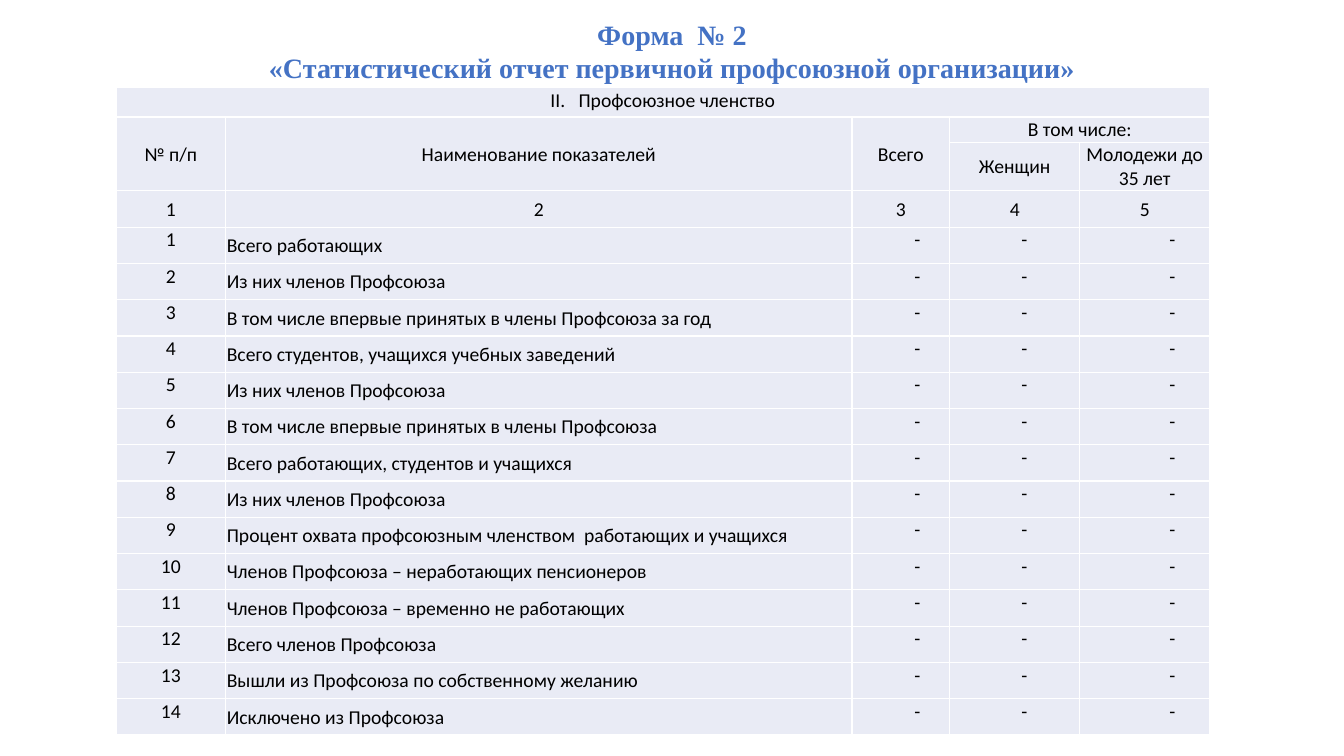
from pptx import Presentation
from pptx import util as u
from pptx.dml import color
from pptx.enum import text as t
from pptx.oxml import ns, xmlchemy

COLORS = {"title": "4472C4", "text": "000000", "cell": "E9EBF5", "border": "FFFFFF"}
TITLE = ["Форма  № 2", "«Статистический отчет первичной профсоюзной организации»"]
COLUMNS = [1.09, 6.21, 0.97, 1.29, 1.29]
HEADER_ROWS = [0.29, 0.25, 0.47]
ROW_HEIGHT = 0.36
DASH_INDENTS = [0.62, 0.71, 0.89]
HEADINGS = [
    (0, 0, 0, 4, "II.   Профсоюзное членство"),
    (1, 0, 2, 0, "№ п/п"),
    (1, 1, 2, 1, "Наименование показателей"),
    (1, 2, 2, 2, "Всего"),
    (1, 3, 1, 4, "В том числе:"),
    (2, 3, 2, 3, "Женщин"),
    (2, 4, 2, 4, "Молодежи до 35 лет"),
]
INDICATORS = [
    "Всего работающих",
    "Из них членов Профсоюза",
    "В том числе впервые принятых в члены Профсоюза за год",
    "Всего студентов, учащихся учебных заведений",
    "Из них членов Профсоюза",
    "В том числе впервые принятых в члены Профсоюза",
    "Всего работающих, студентов и учащихся",
    "Из них членов Профсоюза",
    "Процент охвата профсоюзным членством  работающих и учащихся",
    "Членов Профсоюза – неработающих пенсионеров",
    "Членов Профсоюза – временно не работающих",
    "Всего членов Профсоюза",
    "Вышли из Профсоюза по собственному желанию",
    "Исключено из Профсоюза",
]
TITLE_FONT = {"name": "Times New Roman", "size": u.Pt(20), "bold": True}
CELL_FONT = {"name": "Calibri", "size": u.Pt(14), "bold": False}
CENTER, LEFT = t.PP_ALIGN.CENTER, t.PP_ALIGN.LEFT
TOP, MIDDLE = t.MSO_ANCHOR.TOP, t.MSO_ANCHOR.MIDDLE


def set_all(target, values):
    """Set every attribute in values on the target."""
    for name, value in values.items():
        setattr(target, name, value)


def format_font(font, values, ink):
    """Apply font values and a text colour."""
    set_all(font, values)
    font.color.rgb = color.RGBColor.from_string(COLORS[ink])


def add_title(slide, left, top, width, height):
    """Place the two-line heading in the title placeholder."""
    title = slide.shapes.title
    set_all(title, dict(left=u.Inches(left), top=u.Inches(top),
                        width=u.Inches(width), height=u.Inches(height)))
    frame = title.text_frame
    set_all(frame, dict(text="\n".join(TITLE), word_wrap=True, vertical_anchor=TOP,
                        auto_size=t.MSO_AUTO_SIZE.NONE))
    for line in frame.paragraphs:
        set_all(line, dict(alignment=CENTER, line_spacing=1.0))
        format_font(line.font, TITLE_FONT, "title")


def style_cell(cell):
    """Give a cell its fill, margins and thin borders."""
    set_all(cell, dict(margin_left=u.Inches(0.01), margin_right=u.Inches(0.01),
                       margin_top=u.Inches(0.01), margin_bottom=0))
    properties = cell._tc.get_or_add_tcPr()
    for side in ("lnL", "lnR", "lnT", "lnB"):
        properties.append(xmlchemy.OxmlElement(f"a:{side}"))
        border = properties[-1]
        border.set("w", str(u.Pt(1)))
        solid = xmlchemy.OxmlElement("a:solidFill")
        shade = xmlchemy.OxmlElement("a:srgbClr")
        shade.set("val", COLORS["border"])
        solid.append(shade)
        border.append(solid)
    cell.fill.solid()
    cell.fill.fore_color.rgb = color.RGBColor.from_string(COLORS["cell"])
    format_font(cell.text_frame.paragraphs[0].font, CELL_FONT, "text")


def write_cell(cell, words, alignment, anchor):
    """Write one aligned entry into a cell."""
    paragraph = cell.text_frame.paragraphs[0]
    paragraph.add_run().text = words
    paragraph.alignment = alignment
    format_font(paragraph.runs[0].font, CELL_FONT, "text")
    cell.vertical_anchor = anchor


def add_membership_table(slide, left, top):
    """Build the membership form with its merged heading."""
    heights = HEADER_ROWS + [ROW_HEIGHT] * (len(INDICATORS) + 1)
    table = slide.shapes.add_table(
        len(heights), len(COLUMNS), u.Inches(left), u.Inches(top),
        u.Inches(sum(COLUMNS)), u.Inches(sum(heights))).table
    set_all(table, dict(first_row=False, horz_banding=False))
    for column, width in zip(table.columns, COLUMNS):
        column.width = u.Inches(width)
    for row, height in zip(table.rows, heights):
        row.height = u.Inches(height)
    for cell in table.iter_cells():
        style_cell(cell)
    for row, column, last_row, last_column, words in HEADINGS:
        heading = table.cell(row, column)
        if (row, column) != (last_row, last_column):
            heading.merge(table.cell(last_row, last_column))
        write_cell(heading, words, CENTER, MIDDLE if row else TOP)
    numbering_row = len(HEADER_ROWS)
    for column in range(len(COLUMNS)):
        write_cell(table.cell(numbering_row, column), str(column + 1), CENTER, MIDDLE)
    for number, indicator in enumerate(INDICATORS, 1):
        row = numbering_row + number
        write_cell(table.cell(row, 0), str(number), CENTER, TOP)
        write_cell(table.cell(row, 1), indicator, LEFT, MIDDLE)
        for column, indent in enumerate(DASH_INDENTS, 2):
            dash = table.cell(row, column)
            write_cell(dash, "-", LEFT, TOP)
            dash.margin_left = u.Inches(indent)


def main():
    """Create the form slide and save it."""
    deck = Presentation()
    set_all(deck, dict(slide_width=u.Inches(13.33), slide_height=u.Inches(7.5)))
    slide = deck.slides.add_slide(deck.slide_layouts[5])
    add_title(slide, 0, 0.12, 13.33, 0.77)
    add_membership_table(slide, 1.15, 0.87)
    deck.save("out.pptx")


if __name__ == "__main__":
    main()
